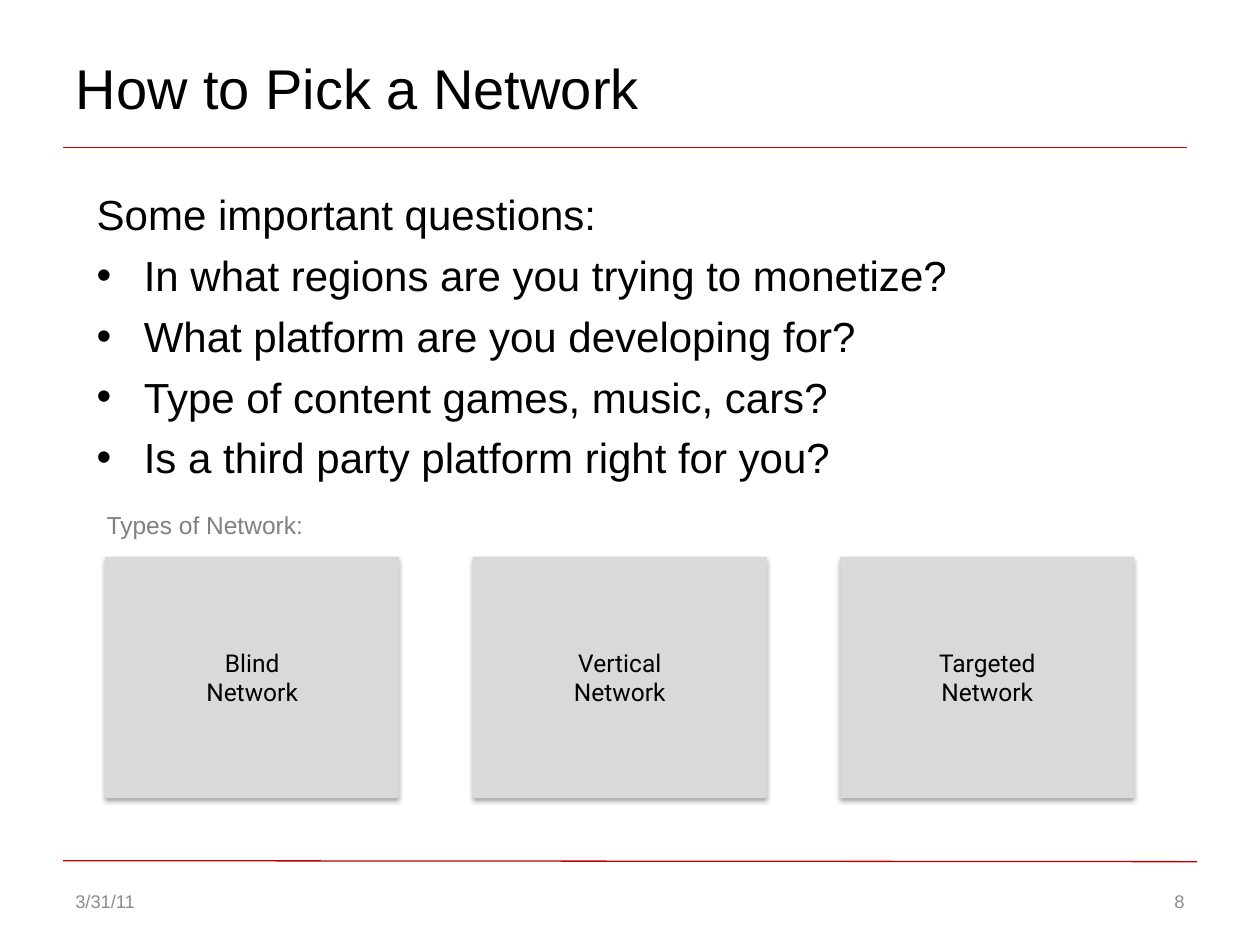
from lxml.etree import SubElement
from pptx import Presentation
from pptx.dml.color import RGBColor
from pptx.enum.shapes import MSO_CONNECTOR as CONNECTOR, MSO_SHAPE as SHAPE
from pptx.enum.text import MSO_ANCHOR as ANCHOR, PP_ALIGN as ALIGN
from pptx.oxml.ns import qn
from pptx.util import Cm, Pt

COLORS = {"text": "000000", "muted": "808080", "footer": "8C8C8C",
          "rule": "C00000", "card": "D9D9D9"}

TITLE = "How to Pick a Network"
INTRO = "Some important questions:"
QUESTIONS = [
    "In what regions are you trying to monetize?",
    "What platform are you developing for?",
    "Type of content games, music, cars?",
    "Is a third party platform right for you?",
]
TYPES_LABEL = "Types of Network:"
NETWORK_TYPES = ["Blind", "Vertical", "Targeted"]

# Start and end points, in centimetres
RULES = [((1.27, 2.97), (23.93, 2.97)), ((1.27, 17.35), (24.13, 17.37))]
# Text, left, alignment
FOOTERS = [("3/31/11", 1.27, ALIGN.LEFT), ("8", 18.21, ALIGN.RIGHT)]

CARD_LEFT, CARD_TOP, CARD_WIDTH, CARD_HEIGHT, CARD_STEP = 2.12, 11.22, 5.93, 4.87, 7.41
HANGING_INDENT = Cm(0.95)


def write(shape, lines, size, color="text", font="Arial",
          align=ALIGN.LEFT, anchor=ANCHOR.MIDDLE):
    frame = shape.text_frame
    frame.word_wrap = True
    frame.vertical_anchor = anchor
    frame.text = "\n".join(lines)
    for para in frame.paragraphs:
        para.alignment = align
        for span in para.runs:
            span.font.name = font
            span.font.size = Pt(size)
            span.font.color.rgb = RGBColor.from_string(COLORS[color])
    return frame


def add_text(slide, place, lines, size, **style):
    box = slide.shapes.add_textbox(*map(Cm, place))
    return write(box, lines, size, **style)


def add_rule(slide, start, end):
    rule = slide.shapes.add_connector(CONNECTOR.STRAIGHT, *map(Cm, start + end))
    rule.line.color.rgb = RGBColor.from_string(COLORS["rule"])
    rule.line.width = Pt(0.75)
    SubElement(rule.element.spPr, qn("a:effectLst"))


def add_shadow(shape):
    """Give the shape a soft black shadow that falls straight down."""
    shape.shadow.inherit = False
    effects = shape.element.spPr.find(qn("a:effectLst"))
    shadow = SubElement(effects, qn("a:outerShdw"), blurRad=str(Pt(3.1)),
                        dist=str(Pt(1.8)), dir="5400000", rotWithShape="0")
    color = SubElement(shadow, qn("a:srgbClr"), val="000000")
    SubElement(color, qn("a:alpha"), val="35000")


def add_questions(slide):
    frame = add_text(slide, (1.7, 3.61, 22.86, 6.55), [INTRO] + QUESTIONS, 24,
                     anchor=ANCHOR.TOP)
    frame.margin_top = Cm(0.2)
    for index, para in enumerate(frame.paragraphs):
        properties = para._p.get_or_add_pPr()
        properties.set("marL", str(HANGING_INDENT))
        properties.set("indent", str(-HANGING_INDENT))
        if index:
            para.space_before = Pt(5.9)
            SubElement(properties, qn("a:buFont"), typeface="Arial")
            SubElement(properties, qn("a:buChar"), char="•")


def add_card(slide, index, name):
    left = CARD_LEFT + index * CARD_STEP
    card = slide.shapes.add_shape(
        SHAPE.RECTANGLE, *map(Cm, (left, CARD_TOP, CARD_WIDTH, CARD_HEIGHT)))
    card.fill.solid()
    card.fill.fore_color.rgb = RGBColor.from_string(COLORS["card"])
    card.line.fill.background()
    add_shadow(card)
    write(card, [name, "Network"], 14, font="Roboto", align=ALIGN.CENTER)


def main():
    deck = Presentation()
    deck.slide_width, deck.slide_height = Cm(25.4), Cm(19.05)
    slide = deck.slides.add_slide(deck.slide_layouts[5])

    for start, end in RULES:
        add_rule(slide, start, end)
    for text, left, align in FOOTERS:
        add_text(slide, (left, 17.65, 5.92, 1.02), [text], 10.5,
                 color="footer", align=align)

    title = slide.shapes.title
    title.left, title.top, title.width, title.height = map(Cm, (1.27, 0.76, 18.85, 1.98))
    write(title, [TITLE], 32)

    add_questions(slide)
    for index, name in enumerate(NETWORK_TYPES):
        add_card(slide, index, name)
    add_text(slide, (1.9, 10.16, 7.42, 0.86), [TYPES_LABEL], 14,
             color="muted", anchor=ANCHOR.TOP)
    deck.save("out.pptx")


if __name__ == "__main__":
    main()
